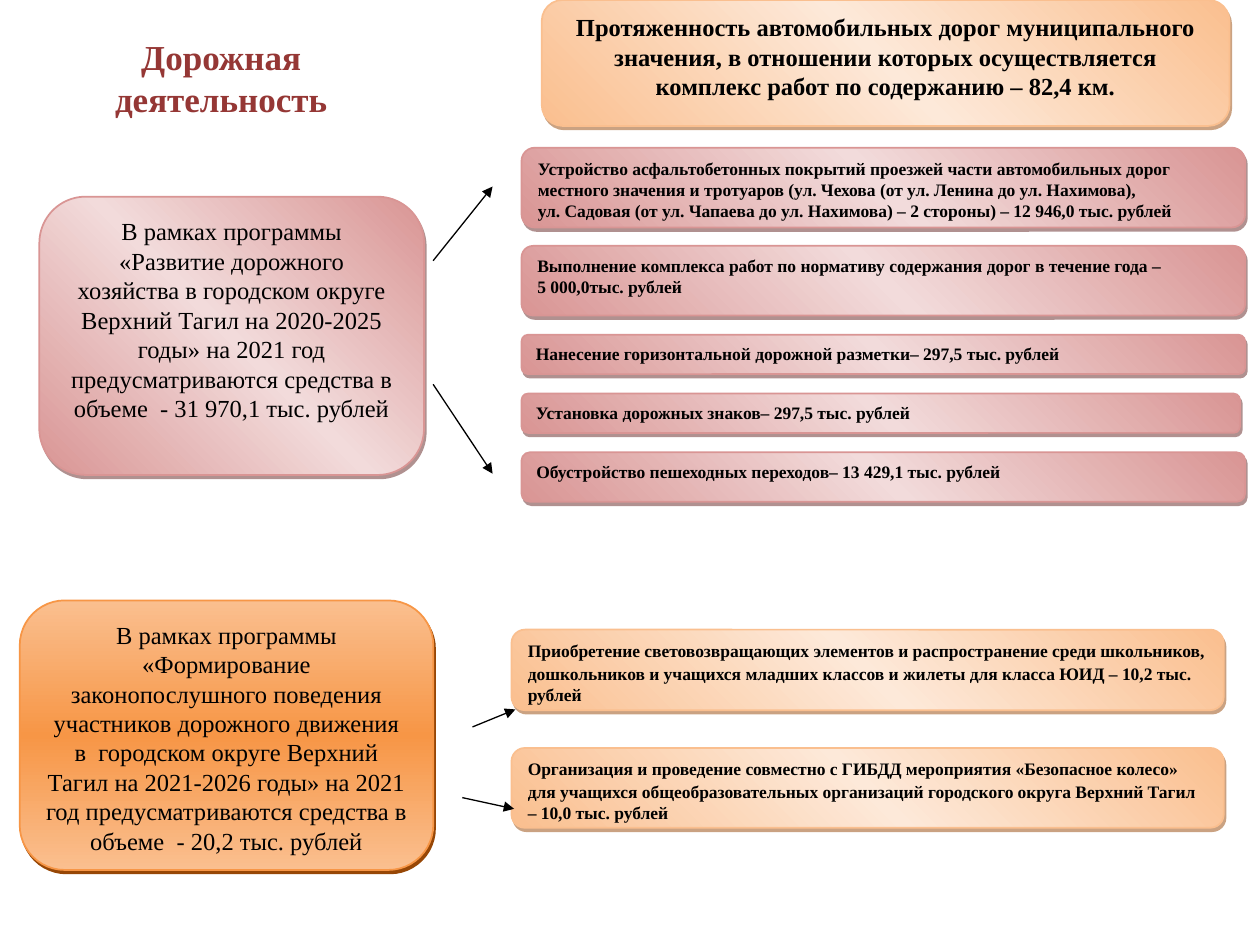
from lxml import etree
from pptx import Presentation
from pptx.dml.color import RGBColor
from pptx.enum.shapes import MSO_CONNECTOR, MSO_SHAPE
from pptx.enum.text import MSO_ANCHOR, MSO_AUTO_SIZE, PP_ALIGN
from pptx.oxml import parse_xml
from pptx.oxml.ns import nsdecls, qn
from pptx.util import Pt

ROUND, LINE = MSO_SHAPE.ROUNDED_RECTANGLE, MSO_CONNECTOR.STRAIGHT
LEFT, MID = PP_ALIGN.LEFT, PP_ALIGN.CENTER
TOP, CENTRE = MSO_ANCHOR.TOP, MSO_ANCHOR.MIDDLE
GROW, FIXED = MSO_AUTO_SIZE.SHAPE_TO_FIT_TEXT, MSO_AUTO_SIZE.NONE

# Box styles: outer and inner tint, line, angle, shadow colour and opacity
ROSE = ("D99594", "F2DBDB", "D99594", 315, "622423", 50)
PEACH = ("FABF8F", "FDE9D9", "FABF8F", 315, "974706", 50)
AMBER = ("FABF8F", "F79646", "F79646", 90, "974706", 100)

# Text formats
SERIF = {"name": "Times New Roman", "bold": True}
TITLE = {**SERIF, "size": Pt(20)}
HEAD = {**SERIF, "size": Pt(14)}
PLAIN = {**HEAD, "bold": False}
ITEM = {**SERIF, "size": Pt(10)}
GAP = {"name": "Calibri", "size": Pt(11), "bold": False}

# Work items: left, top, width, height, paragraphs (each a list of runs)
ROADS = [
    (298, 84.4, 413.5, 45.6, [
        ["Устройство асфальтобетонных покрытий проезжей части автомобильных "
         "дорог местного значения и тротуаров (ул. Чехова (от ул. Ленина до "
         "ул. Нахимова),"],
        ["ул. Садовая (от ул. Чапаева до ул. Нахимова) – 2 стороны) – "
         "12 946,0 тыс. рублей"]]),
    (298, 140.5, 413.5, 39.8, [
        ["Выполнение комплекса работ по нормативу содержания дорог в течение "
         "года –", "\v", "5 000,0тыс. рублей"]]),
    (298, 191.3, 413.5, 22.5, [
        ["Нанесение горизонтальной дорожной разметки– 297,5 тыс. рублей"]]),
    (298, 224.9, 410.6, 22.5, [
        ["Установка дорожных знаков– 297,5 тыс. рублей"]]),
    (298, 258.5, 413.5, 28.2, [
        ["Обустройство пешеходных переходов– 13 429,1 тыс. рублей"]]),
]
SAFETY = [
    (292.3, 359.8, 407, 46, [
        ["Приобретение световозвращающих элементов и распространение среди "
         "школьников, дошкольников и учащихся младших классов и жилеты для",
         " ", "класса ЮИД – 10,2 тыс. рублей"]]),
    (292.3, 427.4, 407, 45.6, [
        ["Организация и проведение совместно с ГИБДД мероприятия «Безопасное "
         "колесо» для учащихся общеобразовательных организаций городского",
         " ", "округа Верхний", " ", "Тагил – 10,0 тыс. рублей"]]),
]
ARROWS = [
    (247.5, 149, 281.5, 106.6),
    (247.5, 219.6, 281.5, 270.7),
    (270, 415.4, 294.5, 405.4),
    (264.2, 455.8, 293.8, 462.2),
]


def tint(code):
    return RGBColor.from_string(code)


def style(font, form, code="000000"):
    for key, value in form.items():
        setattr(font, key, value)
    font.color.rgb = tint(code)


def write(frame, paras, form, align, after):
    frame.word_wrap = True
    frame.vertical_anchor = TOP
    for n, parts in enumerate(paras):
        para = frame.add_paragraph() if n else frame.paragraphs[0]
        para.alignment = align
        para.space_after = Pt(after)
        for part in parts:
            if part == "\v":
                para.add_line_break()
                continue
            run = para.add_run()
            run.text = part
            style(run.font, GAP if part == " " else form)


def paint(shape, look):
    """Give a shape its three-stop gradient, outline and hard shadow."""
    outer, inner, edge, angle, shade, alpha = look
    stops = "".join(
        f'<a:gs pos="{pos * 1000}"><a:srgbClr val="{code}"/></a:gs>'
        for pos, code in ((0, outer), (50, inner), (100, outer)))
    grad = parse_xml(
        f'<a:gradFill {nsdecls("a")} rotWithShape="1"><a:gsLst>{stops}</a:gsLst>'
        f'<a:lin ang="{angle * 60000}" scaled="1"/></a:gradFill>')
    shape.line.color.rgb = tint(edge)
    shape.line.width = Pt(1)
    props = shape.element.spPr
    props.find(qn("a:prstGeom")).addnext(grad)
    props.append(parse_xml(
        f'<a:effectLst {nsdecls("a")}><a:outerShdw dist="{Pt(2.2)}" '
        f'dir="{63 * 60000}" algn="ctr" rotWithShape="0">'
        f'<a:srgbClr val="{shade}"><a:alpha val="{alpha * 1000}"/></a:srgbClr>'
        '</a:outerShdw></a:effectLst>'))


def box(slide, place, paras, look, form, align=LEFT):
    shape = slide.shapes.add_shape(ROUND, *map(Pt, place))
    paint(shape, look)
    after = 10 if len(paras) == 1 else 0
    write(shape.text_frame, paras, form, align, after)


def arrow(slide, ends):
    line = slide.shapes.add_connector(LINE, *map(Pt, ends))
    line.line.color.rgb = tint("000000")
    line.line.width = Pt(0.75)
    tip = etree.SubElement(line.line._get_or_add_ln(), qn("a:tailEnd"))
    tip.set("type", "triangle")
    etree.SubElement(line.element.spPr, qn("a:effectLst"))


def title(slide, text):
    shape = slide.shapes.title
    shape.left, shape.top, shape.width, shape.height = map(
        Pt, (16.6, 16.6, 219.6, 55.4))
    frame = shape.text_frame
    frame.text = text
    frame.word_wrap = True
    frame.auto_size = GROW
    frame.vertical_anchor = CENTRE
    para = frame.paragraphs[0]
    para.alignment = MID
    style(para.runs[0].font, TITLE, "953735")


def main():
    deck = Presentation()
    deck.slide_width, deck.slide_height = Pt(720), Pt(540)
    slide = deck.slides.add_slide(deck.slide_layouts[5])

    # Heading and road length
    title(slide, "Дорожная деятельность")
    box(slide, (309.6, 0, 393, 72), [[
        "Протяженность автомобильных дорог муниципального значения, в "
        "отношении которых осуществляется комплекс работ по содержанию – "
        "82,4 км."]], PEACH, HEAD, MID)

    # Road programme
    for *place, paras in ROADS:
        box(slide, place, paras, ROSE, ITEM)
    box(slide, (22.5, 112.4, 219.8, 159), [[
        "В рамках программы «Развитие дорожного хозяйства в городском округе "
        "Верхний Тагил на 2020-2025 годы» на 2021 год предусматриваются "
        "средства в объеме  - 31 970,1 тыс. рублей"]], ROSE, PLAIN, MID)

    # Road safety programme
    for *place, paras in SAFETY:
        box(slide, place, paras, PEACH, ITEM)
    box(slide, (11.3, 343.1, 236.3, 154), [[
        "В рамках программы «Формирование законопослушного поведения "
        "участников дорожного движения в  городском округе Верхний Тагил на "
        "2021-2026 годы» на 2021 год предусматриваются средства в объеме  - "
        "20,2 тыс. рублей"]], AMBER, PLAIN, MID)

    # Arrows from programmes to their items
    for ends in ARROWS:
        arrow(slide, ends)
    deck.save("out.pptx")


if __name__ == "__main__":
    main()
